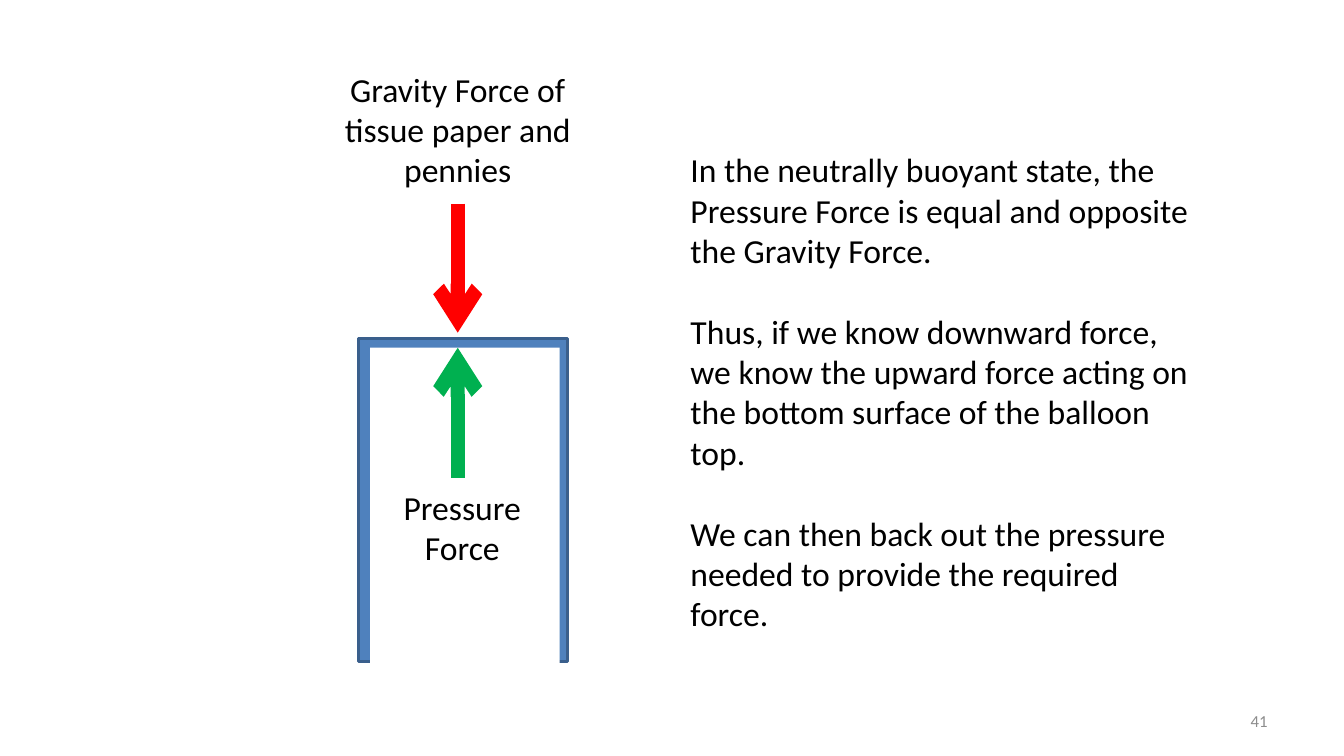
from lxml.etree import SubElement
from pptx import Presentation
from pptx.dml.color import RGBColor
from pptx.enum.shapes import MSO_CONNECTOR, MSO_SHAPE
from pptx.enum.text import MSO_ANCHOR, PP_ALIGN
from pptx.oxml.ns import qn
from pptx.util import Pt

SCALE = 9144  # EMU per px, 100 px to the inch
FONT = "Calibri"
LINE_GAP = 29  # height of one text line in points
BODY = [
    "In the neutrally buoyant state, the Pressure Force is equal and opposite the Gravity Force.",
    "Thus, if we know downward force, we know the upward force acting on the bottom surface of the balloon top.",
    "We can then back out the pressure needed to provide the required force.",
]


def px(*vals):
    return [val * SCALE for val in vals]


def color(code):
    return RGBColor.from_string(code)


def add_text(slide, area, lines, align=PP_ALIGN.LEFT, size=24, tint="000000",
             anchor=MSO_ANCHOR.TOP):
    frame = slide.shapes.add_textbox(*px(*area)).text_frame
    frame.word_wrap = True
    frame.vertical_anchor = anchor
    for num, line in enumerate(lines):
        para = frame.add_paragraph() if num else frame.paragraphs[0]
        para.text = line
        para.alignment = align
        if num:
            para.space_before = Pt(LINE_GAP)
        para.font.name = FONT
        para.font.size = Pt(size)
        para.font.color.rgb = color(tint)


def add_rect(group, area, fill, edge=None):
    rect = group.shapes.add_shape(MSO_SHAPE.RECTANGLE, *px(*area))
    rect.shadow.inherit = False
    rect.fill.solid()
    rect.fill.fore_color.rgb = color(fill)
    if edge:
        rect.line.color.rgb = color(edge)
        rect.line.width = Pt(2)
    else:
        rect.line.fill.background()


def add_arrow(slide, x, start, end, tint):
    arrow = slide.shapes.add_connector(MSO_CONNECTOR.STRAIGHT, *px(x, start, x, end))
    arrow.line.color.rgb = color(tint)
    arrow.line.width = Pt(10)
    SubElement(arrow.line._get_or_add_ln(), qn("a:tailEnd"), type="arrow")
    SubElement(arrow._element.spPr, qn("a:effectLst"))


def main():
    deck = Presentation()
    deck.slide_width, deck.slide_height = px(1333, 750)
    slide = deck.slides.add_slide(deck.slide_layouts[6])

    # Slide number
    add_text(slide, (956, 695, 311, 40), ["41"], PP_ALIGN.RIGHT, 12, "8C8C8C",
             MSO_ANCHOR.MIDDLE)

    # Balloon wall, open at the bottom
    wall = slide.shapes.add_group_shape()
    add_rect(wall, (356, 336, 207, 320), "4F81BD", "3A5F8C")
    add_rect(wall, (367, 345, 188, 317), "FFFFFF")

    # Opposing forces and their labels
    add_arrow(slide, 454, 474, 345, "00B050")
    add_arrow(slide, 454, 202, 330, "FF0000")
    add_text(slide, (368, 478, 181, 91), ["Pressure Force"], PP_ALIGN.CENTER)
    add_text(slide, (320, 63, 268, 131), ["Gravity Force of tissue paper and pennies"],
             PP_ALIGN.CENTER)

    # Explanation
    add_text(slide, (675, 143, 519, 495), BODY)

    deck.save("out.pptx")


if __name__ == "__main__":
    main()
